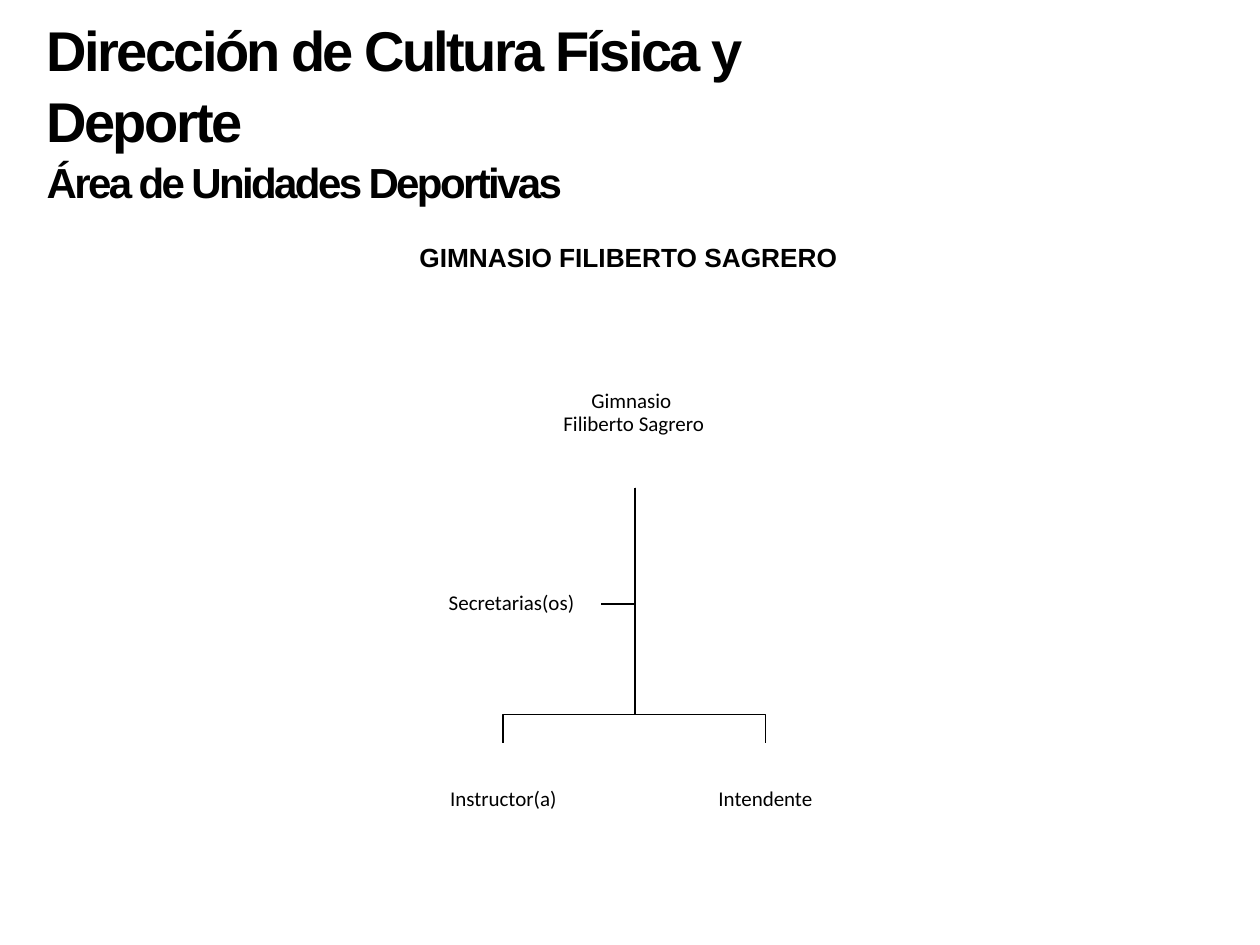
from dataclasses import dataclass

import pptx
import pptx.dml.color
import pptx.enum.text
import pptx.util
from lxml import etree

BLACK = pptx.dml.color.RGBColor(0, 0, 0)
WHITE = pptx.dml.color.RGBColor(255, 255, 255)
SLIDE_WIDTH = pptx.util.Inches(10)
SLIDE_HEIGHT = pptx.util.Inches(7.5)


def across(percent: float) -> int:
    return round(SLIDE_WIDTH * percent / 100)


def down(percent: float) -> int:
    return round(SLIDE_HEIGHT * percent / 100)


@dataclass(frozen=True)
class Post:
    lines: tuple[str, ...]
    left: float
    top: float
    width: float
    height: float

    @property
    def frame(self) -> tuple[int, int, int, int]:
        return across(self.left), down(self.top), across(self.width), down(self.height)

    @property
    def middle(self) -> float:
        return self.left + self.width / 2


TRUNK = 50.4
ROOT_FOOT = 51.6
FORK = 75.6
STAFF_TOP = 78.67
STAFF_SIZE = (16.1, 11.87)

GYM = Post(("Gimnasio ", "Filiberto Sagrero"), 39.3, 36, 22, 15.47)
SECRETARIES = Post(("Secretarias(os)",), 33.5, 58.93, 14.2, 10)
STAFF = (
    Post(("Instructor(a)",), 31.9, STAFF_TOP, *STAFF_SIZE),
    Post(("Intendente",), 52.7, STAFF_TOP, *STAFF_SIZE),
)


def add_words(paragraph, words: str, font_name: str, size: float, bold: bool = False, tracking: int = 0) -> None:
    run = paragraph.add_run()
    run.text = words
    run.font.name = font_name
    run.font.size = pptx.util.Pt(size)
    run.font.bold = bold
    run.font.color.rgb = BLACK
    if tracking:
        run.font._element.set("spc", str(tracking))


def draw_branch(slide, *turns: tuple[float, float]) -> None:
    points = [(across(x), down(y)) for x, y in turns]
    builder = slide.shapes.build_freeform(*points[0])
    builder.add_line_segments(points[1:], close=False)
    branch = builder.convert_to_shape()
    branch.shadow.inherit = False
    branch.fill.background()
    branch.line.color.rgb = BLACK
    branch.line.width = pptx.util.Pt(1)


def draw_post(slide, post: Post, filled: bool = True) -> None:
    box = slide.shapes.add_textbox(*post.frame)
    if filled:
        box.fill.solid()
        box.fill.fore_color.rgb = WHITE
    text = box.text_frame
    text.word_wrap = True
    text.vertical_anchor = pptx.enum.text.MSO_ANCHOR.MIDDLE
    text.margin_left = text.margin_right = pptx.util.Inches(0.01)
    text.margin_top = text.margin_bottom = pptx.util.Inches(0.01)
    paragraph = text.paragraphs[0]
    paragraph.alignment = pptx.enum.text.PP_ALIGN.CENTER
    paragraph.line_spacing = 0.9
    for row, words in enumerate(post.lines):
        if row:
            paragraph.add_line_break()
        add_words(paragraph, words, "Calibri", 12)


def draw_heading(slide) -> None:
    heading = slide.shapes.title
    heading.left, heading.top = across(2.7), down(0.67)
    heading.width, heading.height = across(71.3), down(21.07)
    text = heading.text_frame
    text.word_wrap = True
    text.auto_size = pptx.enum.text.MSO_AUTO_SIZE.NONE
    text.vertical_anchor = pptx.enum.text.MSO_ANCHOR.TOP
    levels = (("Dirección de Cultura Física y Deporte", 32), ("Área de Unidades Deportivas", 24))
    for row, (words, size) in enumerate(levels):
        paragraph = text.add_paragraph() if row else text.paragraphs[0]
        paragraph.alignment = pptx.enum.text.PP_ALIGN.LEFT
        paragraph.line_spacing = 1.05
        add_words(paragraph, words, "Arial", size, bold=True, tracking=-150)


def draw_chart_name(slide) -> None:
    chart_name = slide.shapes.add_textbox(across(32.3), down(24.93), across(35.5), down(4.67))
    chart_name.text_frame.word_wrap = False
    add_words(chart_name.text_frame.paragraphs[0], "GIMNASIO FILIBERTO SAGRERO", "Arial", 15, bold=True)


def main() -> None:
    deck = pptx.Presentation()
    deck.slide_width, deck.slide_height = SLIDE_WIDTH, SLIDE_HEIGHT
    slide = deck.slides.add_slide(deck.slide_layouts.get_by_name("Title Only"))

    draw_heading(slide)
    draw_chart_name(slide)

    secretaries_row = SECRETARIES.top + SECRETARIES.height / 2
    secretaries_edge = SECRETARIES.left + SECRETARIES.width
    draw_branch(slide, (TRUNK, ROOT_FOOT), (TRUNK, secretaries_row), (secretaries_edge, secretaries_row))
    for post in STAFF:
        draw_branch(slide, (TRUNK, ROOT_FOOT), (TRUNK, FORK), (post.middle, FORK), (post.middle, STAFF_TOP))

    draw_post(slide, GYM, filled=False)
    for post in (*STAFF, SECRETARIES):
        draw_post(slide, post)

    deck.save("out.pptx")


if __name__ == "__main__":
    main()
